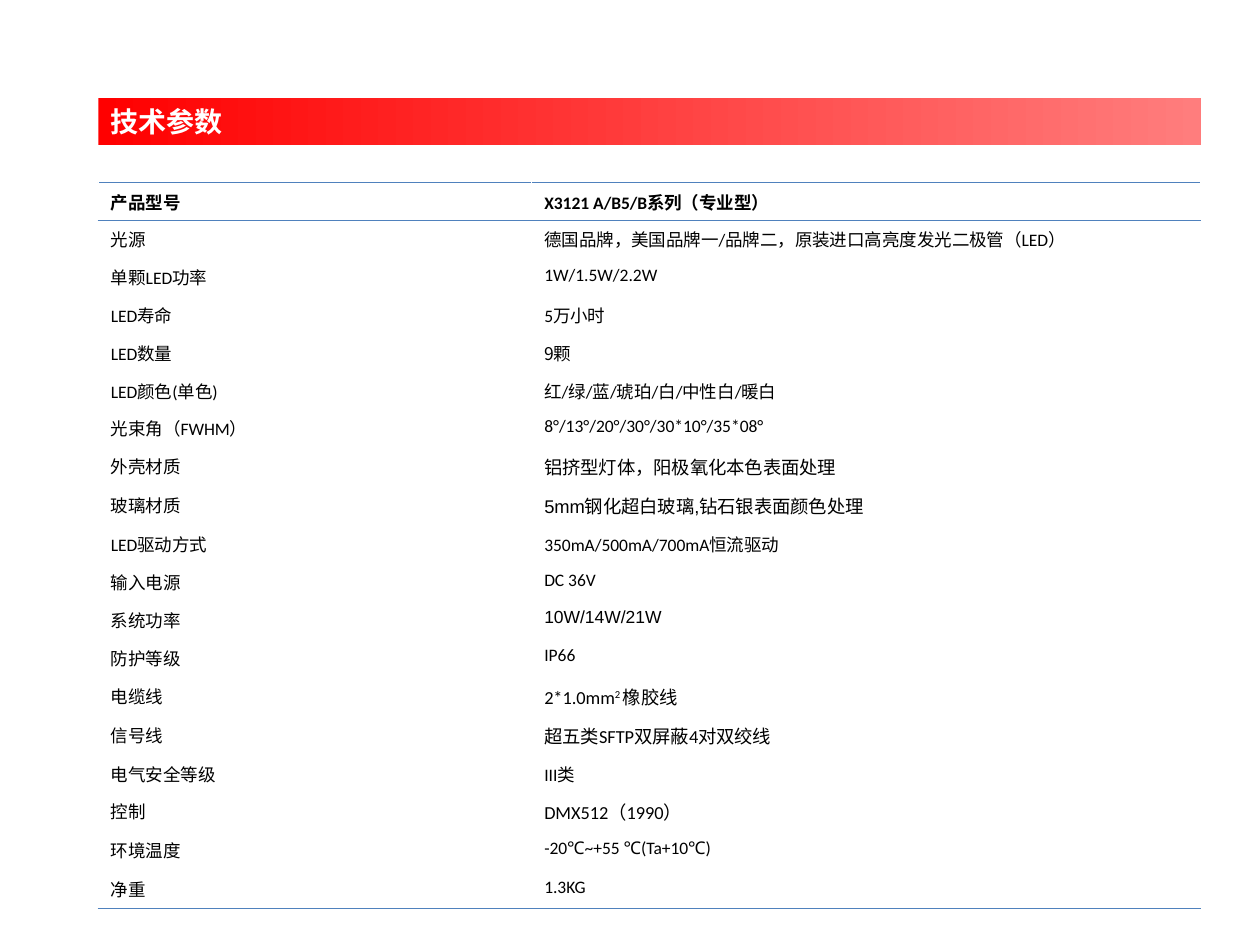
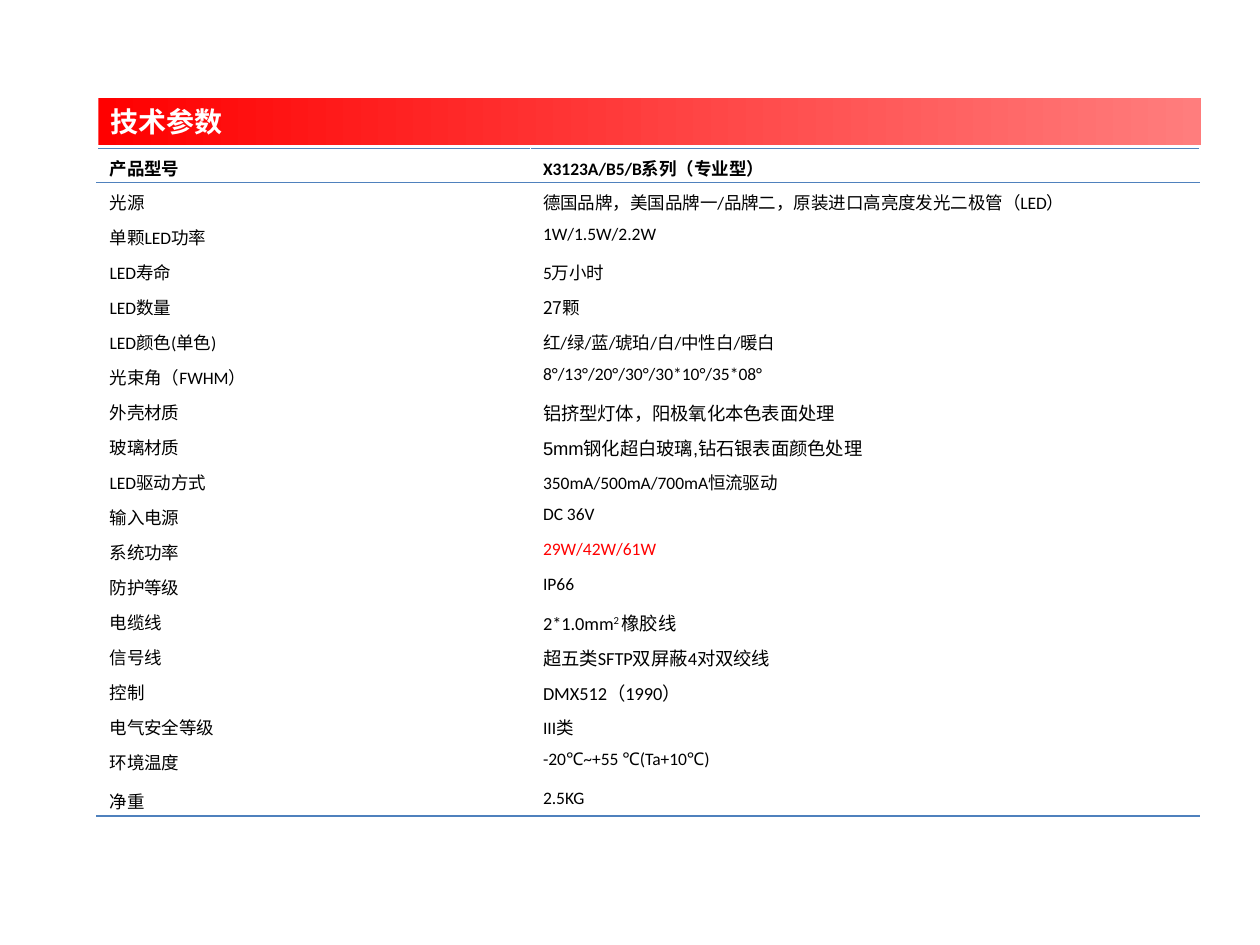
"""Build two lighting specification slides, each with a title band and a table."""
from lxml.etree import SubElement
from pptx import Presentation
from pptx.dml.color import RGBColor
from pptx.enum.shapes import MSO_SHAPE
from pptx.enum.text import MSO_ANCHOR, PP_ALIGN
from pptx.oxml.ns import qn
from pptx.util import Inches, Pt

BLACK = RGBColor(0x00, 0x00, 0x00)
WHITE = RGBColor(0xFF, 0xFF, 0xFF)
RED = RGBColor(0xFF, 0x00, 0x00)
PALE_RED = RGBColor(0xFF, 0x7D, 0x7D)
RULE_BLUE = RGBColor(0x4F, 0x81, 0xBD)

LATIN, SANS, CJK = "Calibri", "Arial", "Noto Sans CJK SC"
TITLE = "技术参数"
BAND = (0.78, 0.78, 8.75, 0.37)
COLUMNS = (3.44, 5.31)
BODY_SIZE, LARGE_SIZE = 10, 10.5

SPECIFICATIONS = {
    "产品型号": "{model}系列（专业型）",
    "光源": "德国品牌，美国品牌一/品牌二，原装进口高亮度发光二极管（LED）",
    "单颗LED功率": "1W/1.5W/2.2W",
    "LED寿命": "5万小时",
    "LED数量": "{count}颗",
    "LED颜色(单色)": "红/绿/蓝/琥珀/白/中性白/暖白",
    "光束角（FWHM）": "8°/13°/20°/30°/30*10°/35*08°",
    "外壳材质": "铝挤型灯体，阳极氧化本色表面处理",
    "玻璃材质": "5mm钢化超白玻璃,钻石银表面颜色处理",
    "LED驱动方式": "350mA/500mA/700mA恒流驱动",
    "输入电源": "DC 36V",
    "系统功率": "{power}",
    "防护等级": "IP66",
    "电缆线": "2*1.0mm^2 ^橡胶线",
    "信号线": "超五类SFTP双屏蔽4对双绞线",
    "电气安全等级": "III类",
    "控制": "DMX512（1990）",
    "环境温度": "-20℃~+55 ℃(Ta+10℃)",
    "净重": "{weight}",
}
HEADER, *_, TEMPERATURE, WEIGHT = SPECIFICATIONS
LARGE_VALUES = {"外壳材质", "玻璃材质", "电缆线", "信号线", "控制"}
VALUE_FONTS = {"LED数量": CJK, "玻璃材质": SANS}

ROOMY_ROWS = {label: 0.31 for label in LARGE_VALUES | {TEMPERATURE}}
COMPACT_ROWS = {HEADER: 0.27, TEMPERATURE: 0.31, WEIGHT: 0.27}
COMPACT_HEIGHT = 5.3
COMPACT_ROW = (COMPACT_HEIGHT - sum(COMPACT_ROWS.values())) / (
    len(SPECIFICATIONS) - len(COMPACT_ROWS))

PRODUCTS = [
    {"fields": {"model": "X3121 A/B5/B", "count": 9, "power": "10W/14W/21W", "weight": "1.3KG"},
     "origin": (0.78, 1.45), "row": 0.3, "rows": ROOMY_ROWS,
     "power_style": (SANS, BLACK),
     "tail": ["电气安全等级", "控制", TEMPERATURE, WEIGHT]},
    {"fields": {"model": "X3123A/B5/B", "count": 27, "power": "29W/42W/61W", "weight": "2.5KG"},
     "origin": (0.77, 1.18), "row": COMPACT_ROW, "rows": COMPACT_ROWS,
     "power_style": (LATIN, RED),
     "tail": ["控制", "电气安全等级", TEMPERATURE, WEIGHT]},
]


def add_run(paragraph, text, size, font, color, bold=False):
    run = paragraph.add_run()
    run.text = text
    run.font.size = Pt(size)
    run.font.name = font
    run.font.bold = bold
    run.font.color.rgb = color
    SubElement(run.font._element, qn("a:ea"), typeface=CJK)
    return run


def add_title_band(slide):
    band = slide.shapes.add_shape(MSO_SHAPE.RECTANGLE, *map(Inches, BAND))
    band.shadow.inherit = False
    band.line.fill.background()
    band.fill.gradient()
    band.fill.gradient_angle = 0
    for stop, color, position in zip(band.fill.gradient_stops, (RED, PALE_RED), (0, 1)):
        stop.color.rgb = color
        stop.position = position
    frame = band.text_frame
    frame.word_wrap = True
    frame.vertical_anchor = MSO_ANCHOR.MIDDLE
    paragraph = frame.paragraphs[0]
    paragraph.alignment = PP_ALIGN.LEFT
    add_run(paragraph, TITLE, 16, CJK, WHITE, bold=True)


def add_rule(cell, side):
    line = SubElement(cell._tc.get_or_add_tcPr(), qn("a:" + side), w=str(Pt(1)))
    fill = SubElement(line, qn("a:solidFill"))
    SubElement(fill, qn("a:srgbClr"), val=str(RULE_BLUE))


def fill_cell(cell, text, size, font, color, bold, sides):
    for side in sides:
        add_rule(cell, side)
    cell.fill.background()
    cell.margin_bottom = 0
    paragraph = cell.text_frame.paragraphs[0]
    for index, part in enumerate(text.split("^")):
        run = add_run(paragraph, part, size, font, color, bold)
        if index % 2:
            run.font._element.set("baseline", "30000")


def add_specification_table(slide, product):
    tail = product["tail"]
    labels = [label for label in SPECIFICATIONS if label not in tail] + tail
    heights = [product["rows"].get(label, product["row"]) for label in labels]
    bounds = (*product["origin"], sum(COLUMNS), sum(heights))
    table = slide.shapes.add_table(
        len(labels), len(COLUMNS), *map(Inches, bounds)).table
    table.first_row = table.horz_banding = False
    for column, width in zip(table.columns, COLUMNS):
        column.width = Inches(width)
    rules = {HEADER: ("lnT", "lnB"), labels[1]: ("lnT",), WEIGHT: ("lnB",)}
    for row, label, height in zip(table.rows, labels, heights):
        row.height = Inches(height)
        value = SPECIFICATIONS[label].format(**product["fields"])
        size = LARGE_SIZE if label in LARGE_VALUES else BODY_SIZE
        font, color = VALUE_FONTS.get(label, LATIN), BLACK
        if label == "系统功率":
            font, color = product["power_style"]
        shared = (label == HEADER, rules.get(label, ()))
        fill_cell(row.cells[0], label, BODY_SIZE, LATIN, BLACK, *shared)
        fill_cell(row.cells[1], value, size, font, color, *shared)


def main():
    presentation = Presentation()
    presentation.slide_width = Inches(10)
    presentation.slide_height = Inches(7.5)
    for product in PRODUCTS:
        slide = presentation.slides.add_slide(presentation.slide_layouts[6])
        add_specification_table(slide, product)
        add_title_band(slide)
    presentation.save("out.pptx")


if __name__ == "__main__":
    main()
